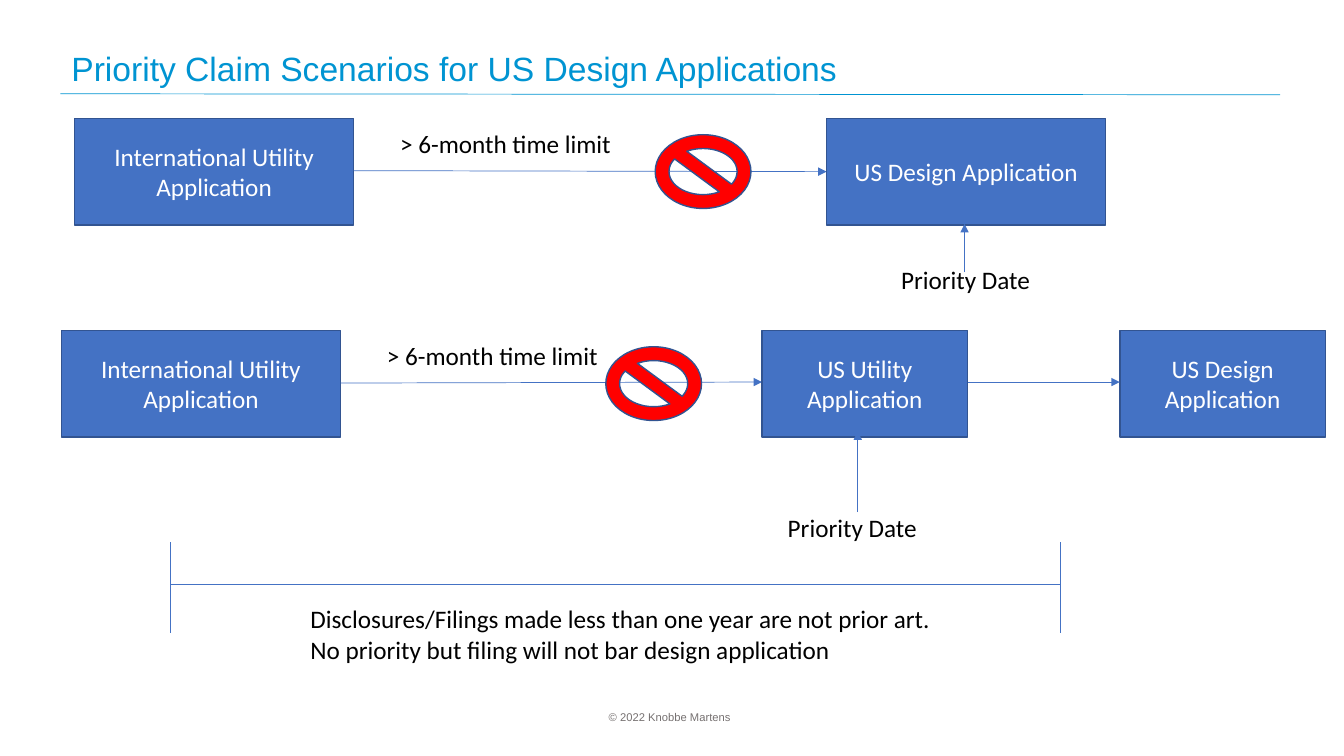
from lxml import etree
from pptx import Presentation
from pptx import util as u
from pptx.dml.color import RGBColor
from pptx.enum import shapes, text
from pptx.oxml.ns import qn


def color(value):
    return RGBColor.from_string(value)


class DiagramSlide:
    TITLE, BLUE, BORDER = "0094D2", "4472C4", "325491"
    RED, WHITE, BLACK, GRAY = "FF0000", "FFFFFF", "000000", "767171"
    BOX_HEIGHT = 76.3

    def __init__(self, presentation):
        self.slide = presentation.slides.add_slide(presentation.slide_layouts[6])

    def add_lines(self, shape, lines, size, font, ink, align, spacing=None):
        frame = shape.text_frame
        for index, line in enumerate(lines):
            paragraph = frame.paragraphs[0] if index == 0 else frame.add_paragraph()
            paragraph.alignment = align
            paragraph.line_spacing = spacing
            run = paragraph.add_run()
            run.text = line
            run.font.size = u.Pt(size)
            run.font.name = font
            run.font.color.rgb = color(ink)

    def label(self, left, top, width, height, *lines, size=18, font="Calibri",
              ink=BLACK, wrap=False, anchor=text.MSO_ANCHOR.TOP, spacing=None):
        shape = self.slide.shapes.add_textbox(*map(u.Pt, (left, top, width, height)))
        shape.text_frame.word_wrap = wrap
        shape.text_frame.vertical_anchor = anchor
        self.add_lines(shape, lines, size, font, ink, text.PP_ALIGN.LEFT, spacing)

    def filled(self, kind, left, top, width, height, fill):
        shape = self.slide.shapes.add_shape(kind, *map(u.Pt, (left, top, width, height)))
        shape.shadow.inherit = False
        shape.fill.solid()
        shape.fill.fore_color.rgb = color(fill)
        shape.line.color.rgb = color(self.BORDER)
        shape.line.width = u.Pt(1)
        return shape

    def box(self, left, top, width, caption):
        shape = self.filled(shapes.MSO_SHAPE.RECTANGLE, left, top, width,
                            self.BOX_HEIGHT, self.BLUE)
        shape.text_frame.word_wrap = True
        shape.text_frame.vertical_anchor = text.MSO_ANCHOR.MIDDLE
        self.add_lines(shape, [caption], 18, "Calibri", self.WHITE, text.PP_ALIGN.CENTER)

    def barred(self, left, top):
        self.filled(shapes.MSO_SHAPE.NO_SYMBOL, left, top, 68.4, 52.7, self.RED)

    def line(self, x1, y1, x2, y2, ink=BLUE, arrow=False):
        connector = self.slide.shapes.add_connector(
            shapes.MSO_CONNECTOR.STRAIGHT, *map(u.Pt, (x1, y1, x2, y2)))
        connector.line.color.rgb = color(ink)
        connector.line.width = u.Pt(0.5)
        properties = connector.element.spPr
        if arrow:
            etree.SubElement(properties.find(qn("a:ln")), qn("a:tailEnd"), type="triangle")
        etree.SubElement(properties, qn("a:effectLst"))

    def arrow(self, x1, y1, x2, y2):
        self.line(x1, y1, x2, y2, arrow=True)


def main():
    presentation = Presentation()
    presentation.slide_width = u.Pt(960)
    presentation.slide_height = u.Pt(540)
    diagram = DiagramSlide(presentation)
    wide, narrow = 199.4, 146.9

    # Title and footer
    diagram.line(43.2, 67, 914.4, 67.7, ink=diagram.TITLE)
    diagram.label(427.7, 504, 103, 17.3, "© 2022 Knobbe Martens",
                  size=8, font="Arial", ink=diagram.GRAY)
    diagram.label(43.9, 31, 870.5, 38.2,
                  "Priority Claim Scenarios for US Design Applications",
                  size=24, font="Arial", ink=diagram.TITLE, wrap=True,
                  anchor=text.MSO_ANCHOR.MIDDLE, spacing=0.9)

    # Both scenarios start with a late international filing
    scenarios = [
        # left, top, next box, its width, its caption, sign left, arrow start and end
        (53.3, 84.5, 590.4, wide, "US Design Application", 468, 121.9, 122.6),
        (43.9, 236, 544.3, narrow, "US Utility Application", 432.7, 273.6, 272.9),
    ]
    for left, top, target, width, caption, sign, start, end in scenarios:
        diagram.box(left, top, wide, "International Utility Application")
        diagram.arrow(left + wide, start, target, end)
        diagram.label(left + 225.4, top + 3.4, 167, 29, "> 6-month time limit")
        diagram.box(target, top, width, caption)
        diagram.barred(sign, top + 11.7)

    # Design application that follows the US utility application
    diagram.box(799.9, 236, narrow, "US Design Application")
    diagram.arrow(691.2, 272.9, 799.9, 272.9)

    # Priority dates
    for x, bottom, top, left, label_top in [(689, 194.4, 160, 636.5, 185.2),
                                            (612.7, 365.8, 308.2, 555.6, 362.4)]:
        diagram.arrow(x, bottom, x, top)
        diagram.label(left, label_top, 107.3, 29, "Priority Date")

    # One-year bracket
    first, last = 121.7, 757.4
    for x in (first, last):
        diagram.line(x, 387.4, x, 452.2)
    diagram.line(first, 417.6, last, 417.6)
    diagram.label(214.6, 427.7, 462.2, 51,
                  "Disclosures/Filings made less than one year are not prior art.",
                  "No priority but filing will not bar design application")

    presentation.save("out.pptx")


if __name__ == "__main__":
    main()
